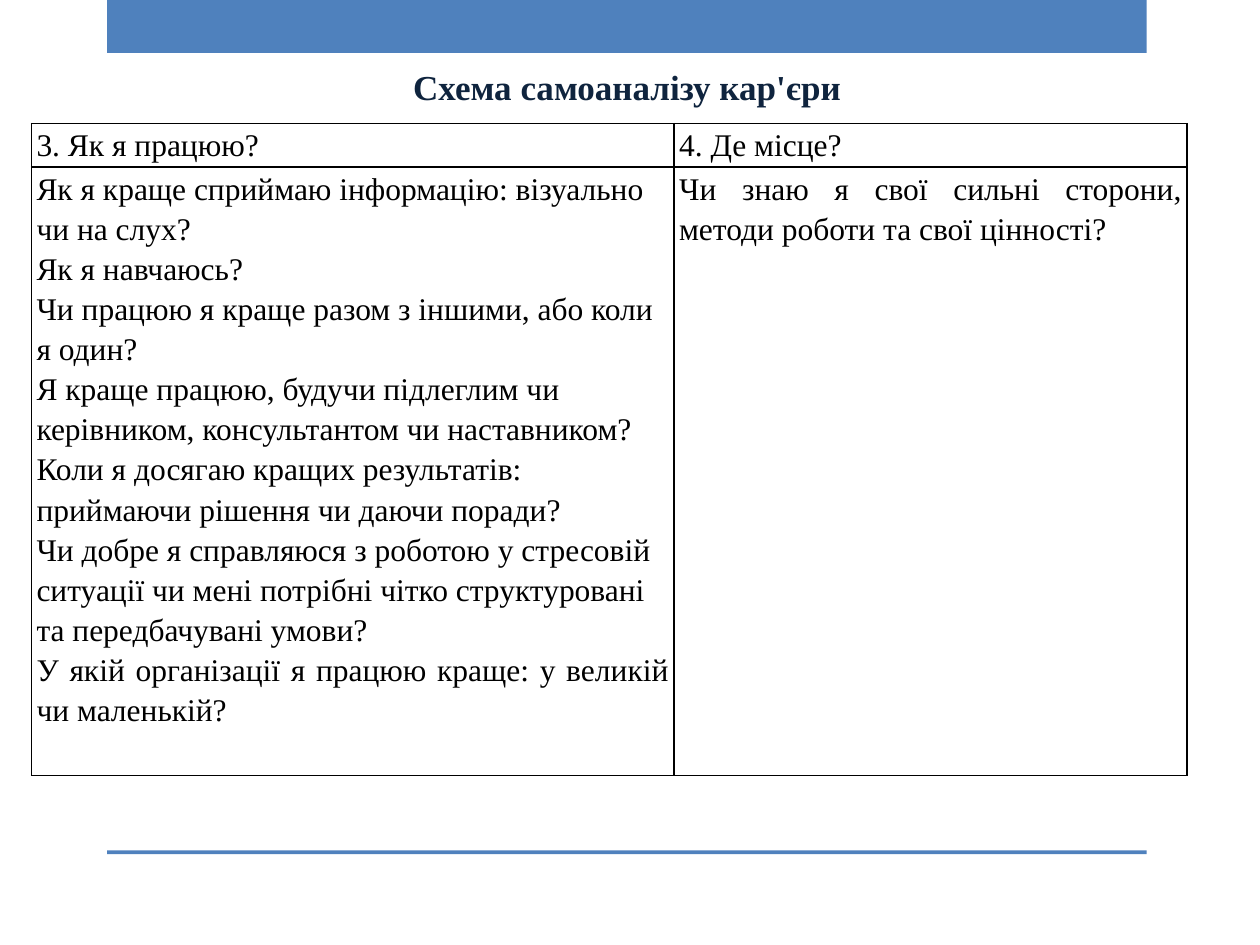
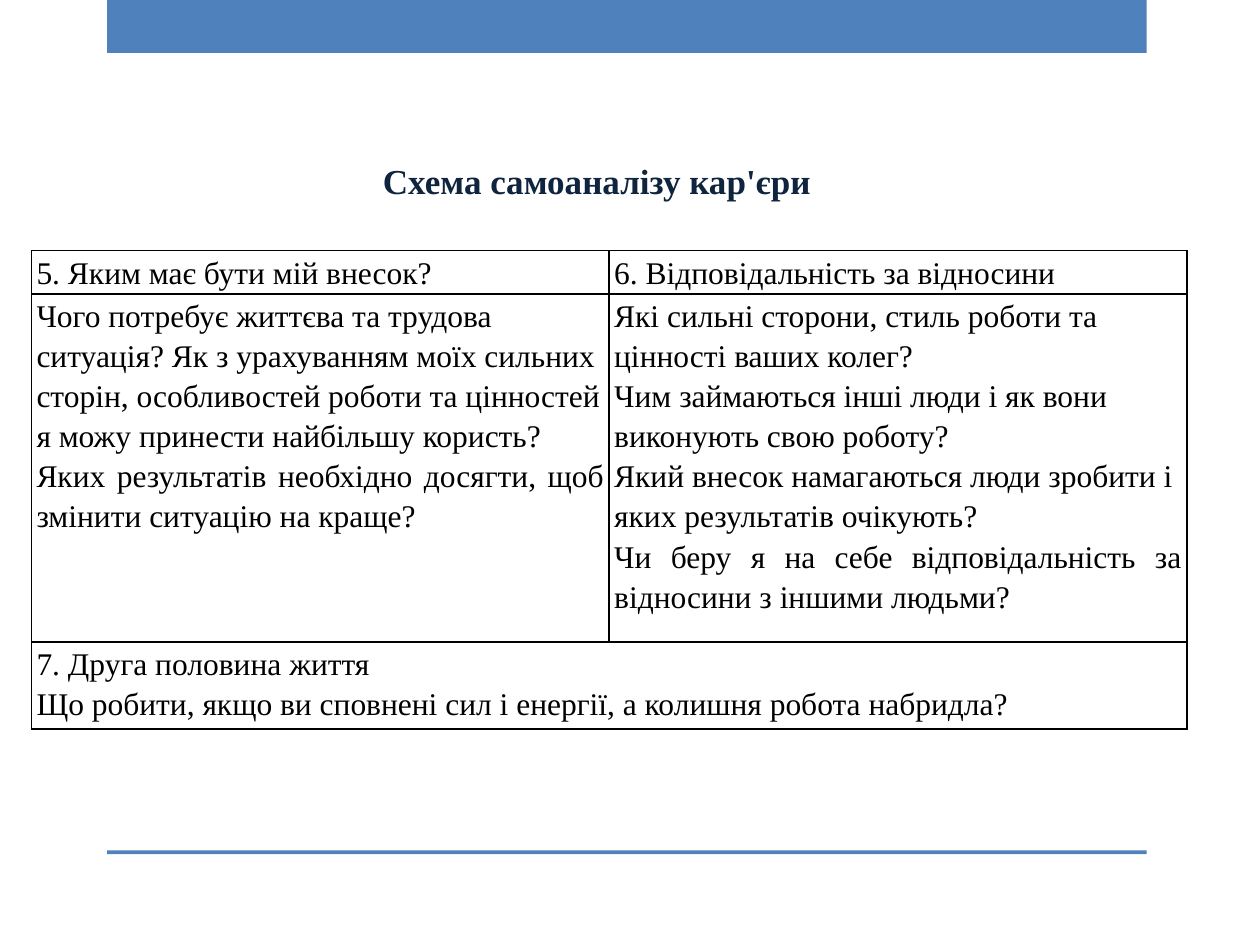
from dataclasses import dataclass

from lxml.etree import SubElement
from pptx import Presentation
from pptx.dml.color import RGBColor
from pptx.enum.shapes import MSO_SHAPE as Shape
from pptx.enum.text import MSO_AUTO_SIZE as AutoSize, PP_ALIGN as Align
from pptx.oxml.ns import qn
from pptx.slide import Slide
from pptx.table import _Cell as Cell
from pptx.util import Inches, Length, Pt

WIDTH, HEIGHT = Inches(10), Inches(7.5)
BAND_BLUE = RGBColor(0x4F, 0x81, 0xBD)
TITLE_NAVY = RGBColor(0x0F, 0x24, 0x3E)
BLACK = RGBColor(0, 0, 0)
FONT = "Times New Roman"
TITLE = "Схема самоаналізу кар'єри"
HEADING_ROW = 4.6


def across(percent: float) -> Length:
    return Length(round(WIDTH * percent / 100))


def down(percent: float) -> Length:
    return Length(round(HEIGHT * percent / 100))


@dataclass(frozen=True)
class Band:
    """A full-width bar; lengths are percent of the slide height."""
    top: float
    height: float


@dataclass(frozen=True)
class Topic:
    """One table column: a heading over its questions."""
    heading: str
    questions: tuple[str, ...]
    width: float


@dataclass(frozen=True)
class Scheme:
    """One slide's content; lengths are percent of the slide."""
    title_left: float
    title_top: float
    table_top: float
    body_height: float
    topics: tuple[Topic, ...]
    closing: tuple[str, ...] = ()
    closing_height: float = 0


BANDS = (Band(0, 5.6), Band(90, 0.4))

SCHEMES = (
    Scheme(31.8, 6.27, 13.07, 64.4, (
        Topic("3. Як я працюю?", (
            "Як я краще сприймаю інформацію: візуально чи на слух?",
            "Як я навчаюсь?",
            "Чи працюю я краще разом з іншими, або коли я один?",
            "Я краще працюю, будучи підлеглим чи керівником, консультантом чи наставником?",
            "Коли я досягаю кращих результатів: приймаючи рішення чи даючи поради?",
            "Чи добре я справляюся з роботою у стресовій ситуації чи мені потрібні "
            "чітко структуровані та передбачувані умови?",
            "У якій організації я працюю краще: у великій чи маленькій?",
        ), 51),
        Topic("4. Де місце?", (
            "Чи знаю я свої сильні сторони, методи роботи та свої цінності?",
        ), 40.7),
    )),
    Scheme(29.4, 16.27, 26.53, 36.8, (
        Topic("5. Яким має бути мій внесок?", (
            "Чого потребує життєва та трудова ситуація? Як з урахуванням моїх сильних "
            "сторін, особливостей роботи та цінностей я можу принести найбільшу користь?",
            "Яких результатів необхідно досягти, щоб змінити ситуацію на краще?",
        ), 45.85),
        Topic("6. Відповідальність за відносини", (
            "Які сильні сторони, стиль роботи та цінності ваших колег?",
            "Чим займаються інші люди і як вони виконують свою роботу?",
            "Який внесок намагаються люди зробити і яких результатів очікують?",
            "Чи беру я на себе відповідальність за відносини з іншими людьми?",
        ), 45.85),
    ), (
        "7. Друга половина життя",
        "Що робити, якщо ви сповнені сил і енергії, а колишня робота набридла?",
    ), 9.2),
)


def draw_band(slide: Slide, band: Band) -> None:
    bar = slide.shapes.add_shape(
        Shape.RECTANGLE, across(8.5), down(band.top), across(82.5), down(band.height))
    bar.shadow.inherit = False
    bar.fill.solid()
    bar.fill.fore_color.rgb = BAND_BLUE
    bar.line.fill.background()


def draw_title(slide: Slide, left: float, top: float) -> None:
    frame = slide.shapes.add_textbox(
        across(left), down(top), across(36.9), down(5.87)).text_frame
    frame.word_wrap = False
    frame.auto_size = AutoSize.SHAPE_TO_FIT_TEXT
    title = frame.paragraphs[0]
    title.text = TITLE
    title.font.name, title.font.size, title.font.bold = FONT, Pt(20), True
    title.font.color.rgb = TITLE_NAVY


def outline(cell: Cell) -> None:
    """Give the cell a thin black border and no fill."""
    properties = cell._tc.get_or_add_tcPr()
    for side in ("lnL", "lnR", "lnT", "lnB"):
        line = SubElement(properties, qn(f"a:{side}"), w=str(Pt(1)))
        SubElement(SubElement(line, qn("a:solidFill")), qn("a:srgbClr"), val=str(BLACK))
    cell.fill.background()


def write(cell: Cell, lines: tuple[str, ...], justify_last: bool = True) -> None:
    cell.margin_left = cell.margin_right = Inches(0.04)
    cell.margin_top = cell.margin_bottom = 0
    cell.text = "\n".join(lines)
    for paragraph in cell.text_frame.paragraphs:
        paragraph.line_spacing = 1.15
        paragraph.font.name, paragraph.font.size = FONT, Pt(18)
        paragraph.font.color.rgb = BLACK
    if justify_last:
        cell.text_frame.paragraphs[-1].alignment = Align.JUSTIFY


def draw_table(slide: Slide, scheme: Scheme) -> None:
    heights = [HEADING_ROW, scheme.body_height]
    if scheme.closing:
        heights.append(scheme.closing_height)
    table = slide.shapes.add_table(
        len(heights), len(scheme.topics), across(2.5), down(scheme.table_top),
        across(sum(topic.width for topic in scheme.topics)), down(sum(heights))).table
    table.first_row = table.horz_banding = False
    for row, height in zip(table.rows, heights):
        row.height = down(height)
    for cell in table.iter_cells():
        outline(cell)
    for column, topic in enumerate(scheme.topics):
        table.columns[column].width = across(topic.width)
        write(table.cell(0, column), (topic.heading,), justify_last=False)
        write(table.cell(1, column), topic.questions)
    if scheme.closing:
        closing = table.cell(2, 0)
        closing.merge(table.cell(2, len(scheme.topics) - 1))
        write(closing, scheme.closing)


def main() -> None:
    deck = Presentation()
    deck.slide_width, deck.slide_height = WIDTH, HEIGHT
    for scheme in SCHEMES:
        slide = deck.slides.add_slide(deck.slide_layouts[6])
        for band in BANDS:
            draw_band(slide, band)
        draw_title(slide, scheme.title_left, scheme.title_top)
        draw_table(slide, scheme)
    deck.save("out.pptx")


if __name__ == "__main__":
    main()
